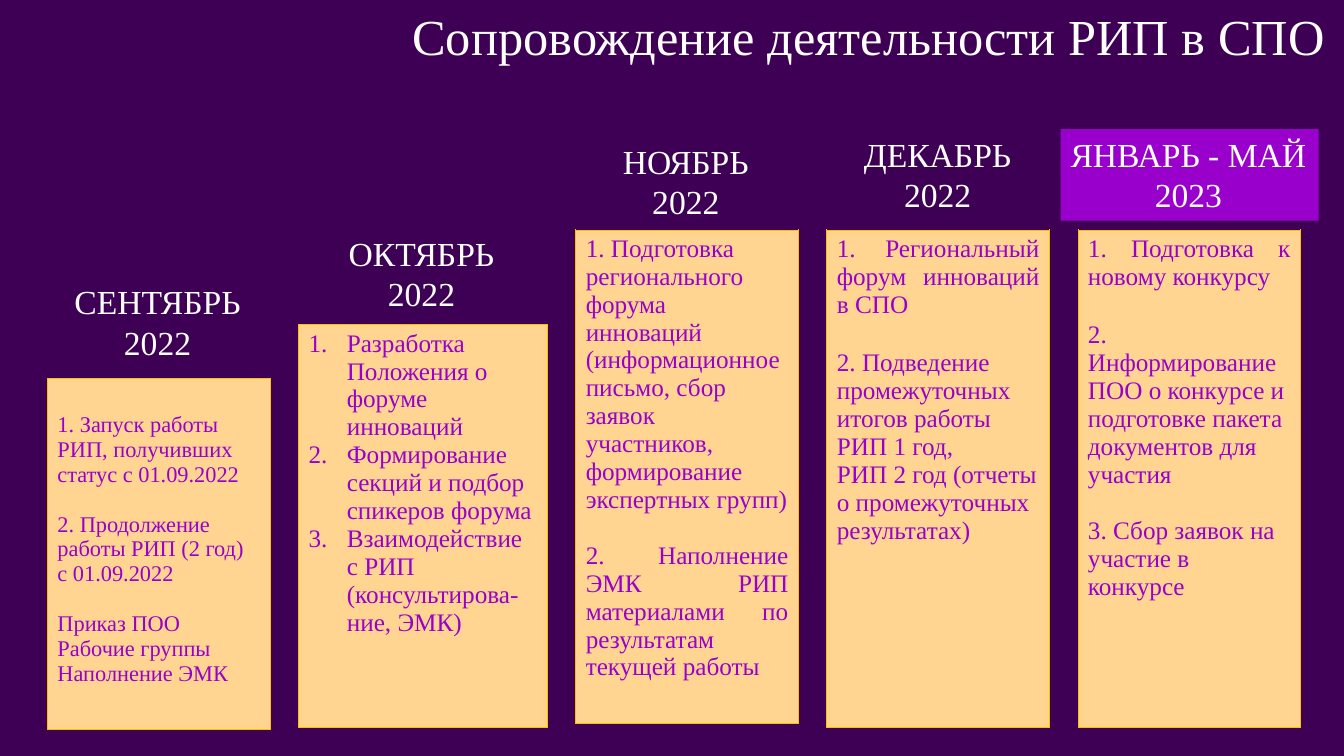
from pptx import Presentation
from pptx import util as u
from pptx.dml.color import RGBColor
from pptx.enum import text
from pptx.oxml import parse_xml
from pptx.oxml.ns import nsdecls

COLORS = {
    "background": "3E0054",
    "light": "FFFFFF",
    "violet": "9900CC",
    "card": "FFD591",
    "border": "FFC000",
}
LEFT, CENTER, JUSTIFY = text.PP_ALIGN.LEFT, text.PP_ALIGN.CENTER, text.PP_ALIGN.JUSTIFY


def rgb(name):
    return RGBColor.from_string(COLORS[name])


class Deck:
    font = "Times New Roman"

    def __init__(self):
        self.prs = Presentation()
        self.prs.slide_width = u.Inches(13.33)
        self.prs.slide_height = u.Inches(7.5)
        self.s = self.prs.slides.add_slide(self.prs.slide_layouts[5])
        fill = self.s.background.fill
        fill.solid()
        fill.fore_color.rgb = rgb("background")

    def style_paragraph(self, p, words, size, color, align=LEFT, gap=0):
        p.text = words
        p.alignment = align
        p.space_before = u.Pt(gap)
        for r in p.runs:
            r.font.size = u.Pt(size)
            r.font.name = self.font
            r.font.color.rgb = rgb(color)

    def title(self, words, box):
        sp = self.s.shapes.title
        sp.left, sp.top, sp.width, sp.height = map(u.Inches, box)
        tf = sp.text_frame
        tf.word_wrap = False
        tf.auto_size = text.MSO_AUTO_SIZE.SHAPE_TO_FIT_TEXT
        tf.vertical_anchor = text.MSO_ANCHOR.TOP
        self.style_paragraph(tf.paragraphs[0], words, 36, "light")

    def month(self, name, year, box, fill=None):
        sp = self.s.shapes.add_textbox(*map(u.Inches, box))
        if fill:
            sp.fill.solid()
            sp.fill.fore_color.rgb = rgb(fill)
        tf = sp.text_frame
        tf.word_wrap = False
        tf.auto_size = text.MSO_AUTO_SIZE.SHAPE_TO_FIT_TEXT
        self.style_paragraph(tf.paragraphs[0], name, 24, "light")
        self.style_paragraph(tf.add_paragraph(), year, 24, "light", CENTER)

    def border(self, cell):
        tcPr = cell._tc.get_or_add_tcPr()
        for side in ("lnL", "lnR", "lnT", "lnB"):
            tcPr.append(parse_xml(
                f'<a:{side} {nsdecls("a")} w="{u.Pt(0.5)}"><a:solidFill>'
                f'<a:srgbClr val="{COLORS["border"]}"/></a:solidFill></a:{side}>'))

    def number(self, p):
        pPr = p._p.get_or_add_pPr()
        indent = u.Inches(0.38)
        pPr.set("marL", str(indent))
        pPr.set("indent", str(-indent))
        pPr.append(parse_xml(f'<a:buAutoNum {nsdecls("a")} type="arabicPeriod"/>'))

    def card(self, tasks, box, size=18, numbered=False, top=0.05):
        table = self.s.shapes.add_table(1, 1, *map(u.Inches, box)).table
        table.first_row = table.horz_banding = False
        cell = table.cell(0, 0)
        cell.margin_top = u.Inches(top)
        self.border(cell)
        cell.fill.solid()
        cell.fill.fore_color.rgb = rgb("card")
        tf = cell.text_frame
        for i, (words, gap, align) in enumerate(tasks):
            p = tf.add_paragraph() if i else tf.paragraphs[0]
            self.style_paragraph(p, words, size, "violet", align, gap)
            if numbered:
                self.number(p)


SEPTEMBER = [
    ("1. Запуск работы РИП, получивших статус с 01.09.2022", 0, LEFT),
    ("2. Продолжение работы РИП (2 год)", 18, LEFT),
    ("с 01.09.2022", 0, LEFT),
    ("Приказ ПОО", 18, LEFT),
    ("Рабочие группы", 0, LEFT),
    ("Наполнение ЭМК", 0, LEFT),
]
OCTOBER = [
    ("Разработка Положения о форуме инноваций", 0, LEFT),
    ("Формирование секций и подбор спикеров форума", 0, LEFT),
    ("Взаимодействие с РИП (консультирова-ние, ЭМК)", 0, LEFT),
]
NOVEMBER = [
    ("1. Подготовка регионального форума инноваций", 0, LEFT),
    ("(информационное письмо, сбор заявок участников, формирование экспертных групп)", 0, LEFT),
    ("2. Наполнение ЭМК РИП материалами по результатам текущей работы", 20, JUSTIFY),
]
DECEMBER = [
    ("1. Региональный форум инноваций в СПО", 0, JUSTIFY),
    ("2. Подведение промежуточных итогов работы", 22, LEFT),
    ("РИП 1 год,", 0, LEFT),
    ("РИП 2 год (отчеты о промежуточных результатах)", 0, LEFT),
]
SPRING = [
    ("1. Подготовка к новому конкурсу", 0, JUSTIFY),
    ("2. Информирование ПОО о конкурсе и подготовке пакета документов для участия", 22, LEFT),
    ("3. Сбор заявок на участие в конкурсе", 20, LEFT),
]


def main():
    deck = Deck()
    deck.title("Сопровождение деятельности РИП в СПО", (3.99, 0, 9.35, 0.71))

    deck.card(SEPTEMBER, (0.47, 3.75, 2.21, 3.49), size=16, top=0.34)
    deck.card(OCTOBER, (2.96, 3.22, 2.47, 4), numbered=True)
    deck.card(NOVEMBER, (5.71, 2.28, 2.21, 4.9))
    deck.card(DECEMBER, (8.2, 2.28, 2.21, 4.94))
    deck.card(SPRING, (10.69, 2.28, 2.21, 4.94))

    deck.month("СЕНТЯБРЬ", "2022", (0.64, 2.74, 1.87, 0.91))
    deck.month("ОКТЯБРЬ", "2022", (3.36, 2.26, 1.66, 0.91))
    deck.month("НОЯБРЬ", "2022", (6.08, 1.35, 1.46, 0.91))
    deck.month("ДЕКАБРЬ", "2022", (8.47, 1.28, 1.68, 0.91))
    deck.month("ЯНВАРЬ - МАЙ", "2023", (10.52, 1.28, 2.56, 0.91), fill="violet")

    deck.prs.save("out.pptx")


if __name__ == "__main__":
    main()
